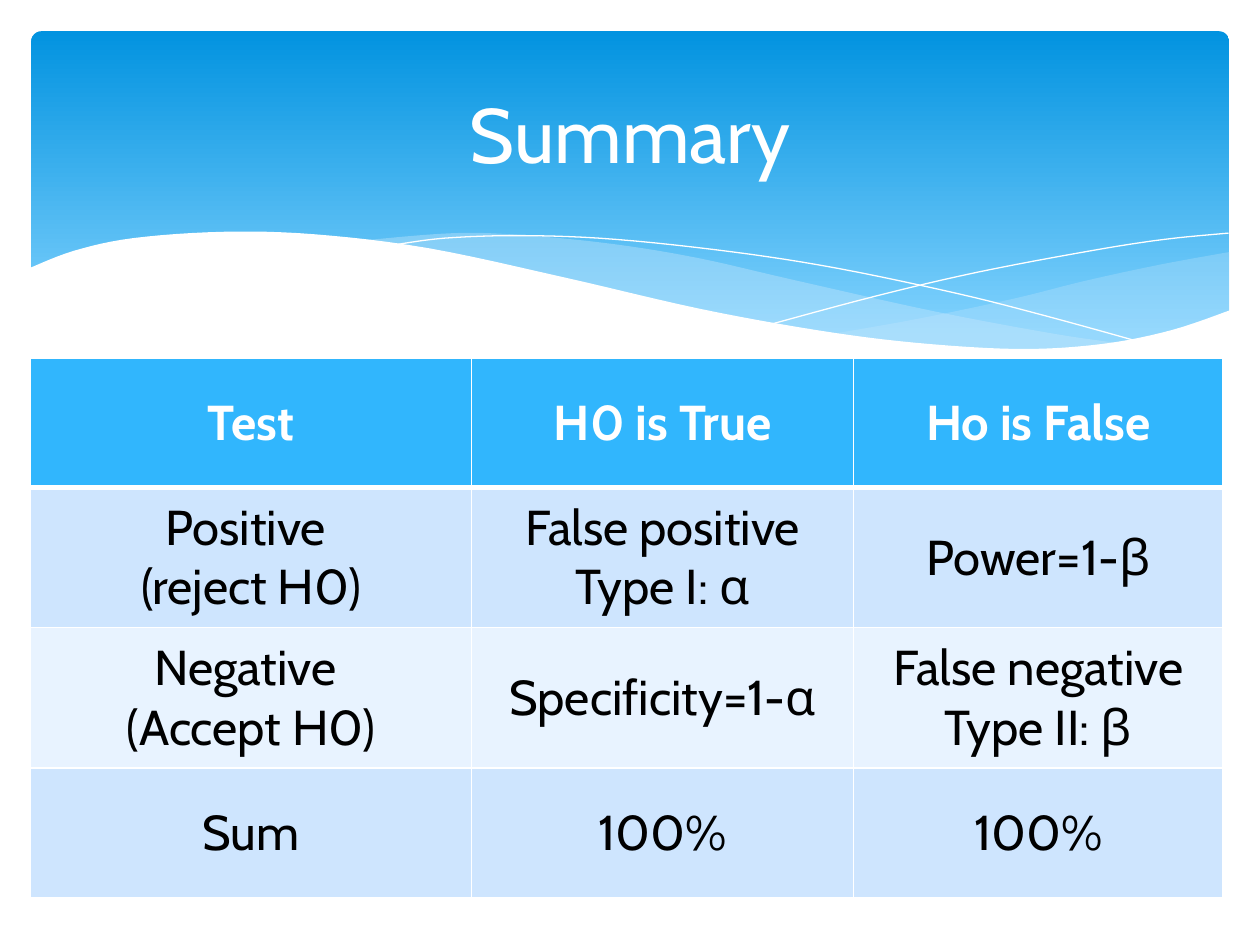
import pptx
import pptx.dml.color
import pptx.enum.shapes
import pptx.enum.text
import pptx.oxml.ns
import pptx.util
from lxml import etree
from pptx.util import Cm, Pt

COLORS = {
    "white": "FFFFFF", "black": "000000", "deep": "0293E0", "sky": "83D3FE",
    "mist": "C6E7FC", "head": "31B6FD", "band": "CEE5FE", "pale": "E8F3FF",
}
FONT = "Cabin"
ROWS = [
    ["Test", "H0 is True", "Ho is False"],
    ["Positive \n(reject H0)", "False positive\nType I: α", "Power=1-β"],
    ["Negative \n(Accept H0)", "Specificity=1-α", "False negative\nType II: β"],
    ["Sum", "100%", "100%"],
]
RIGHT = [
    [(6.61, 2.65), (7.29, 2.53), (8.05, 2.37), (8.61, 2.23), (9.21, 2.1), (9.76, 2)],
    [(9.76, 2.47), (9.49, 2.57), (9.13, 2.67), (8.72, 2.74), (8.14, 2.78),
     (7.57, 2.76), (7.05, 2.71), (6.61, 2.65)],
]
LEFT = [
    [(8.93, 2.73), (8.37, 2.65), (7.41, 2.47), (6.29, 2.22), (5.55, 2.05),
     (4.89, 1.94), (4.2, 1.87), (3.61, 1.85), (2.86, 1.91)],
    [(2.86, 1.91), (3.62, 2.03), (4.49, 2.22), (5.3, 2.4), (6.18, 2.58),
     (6.95, 2.7), (7.61, 2.77), (8.28, 2.78), (8.93, 2.73)],
]
FALL = [[(3.09, 1.95), (3.53, 1.89), (4.16, 1.87), (4.89, 1.9), (5.82, 2),
         (6.65, 2.13), (7.6, 2.33), (8.31, 2.51), (9.07, 2.72)]]
RISE = [[(6.13, 2.57), (6.95, 2.35), (7.76, 2.16), (8.66, 1.99),
         (9.24, 1.9), (9.75, 1.85)]]
FRONT = [
    [(0.23, 2.13), (0.59, 1.99), (1.06, 1.89), (1.77, 1.84), (2.5, 1.86),
     (3.4, 1.97), (4.47, 2.2), (5.55, 2.45), (6.48, 2.62), (7.26, 2.72),
     (8.09, 2.77), (8.75, 2.73), (9.3, 2.62), (9.77, 2.46)],
    [(9.77, 3.29), (0.23, 3.29)],
]


def tint(name):
    """Return the named colour."""
    return pptx.dml.color.RGBColor.from_string(COLORS[name])


def paint(fill, name):
    """Fill with one solid colour."""
    fill.solid()
    fill.fore_color.rgb = tint(name)


def write(frame, text, size=28, color="black", bold=False):
    """Put centred lines of text in a frame."""
    frame.word_wrap = True
    frame.text = text
    for para in frame.paragraphs:
        para.alignment = pptx.enum.text.PP_ALIGN.CENTER
        for run in para.runs:
            run.font.name = FONT
            run.font.size = Pt(size)
            run.font.bold = bold
            run.font.color.rgb = tint(color)


def smooth(knots, steps=6):
    """Return points of a Catmull-Rom curve through the knots."""
    ends = [knots[0], *knots, knots[-1]]
    points = []
    for a, b, c, d in zip(ends, ends[1:], ends[2:], ends[3:]):
        for t in (i / steps for i in range(steps)):
            points.append(tuple(
                q + t * (r - p) / 2 + t**2 * (2 * p - 5 * q + 4 * r - s) / 2
                + t**3 * (3 * q - p - 3 * r + s) / 2
                for p, q, r, s in zip(a, b, c, d)))
    return points + [knots[-1]]


def wave(slide, box, curves, color=None, alpha=100):
    """Draw a filled wave, or a thin white line if no colour is given."""
    left, top, width, _ = box
    unit = width / 10
    points = [(Cm(left + x * unit), Cm(top + y * unit))
              for knots in curves for x, y in smooth(knots)]
    pen = slide.shapes.build_freeform(*points[0], scale=1.0)
    pen.add_line_segments(points[1:], close=color is not None)
    shape = pen.convert_to_shape()
    shape.shadow.inherit = False
    if color is None:
        shape.fill.background()
        shape.line.color.rgb = tint("white")
        shape.line.width = Pt(0)
        return
    paint(shape.fill, color)
    shape.line.fill.background()
    if alpha < 100:
        node = shape._element.spPr.find(".//" + pptx.oxml.ns.qn("a:srgbClr"))
        etree.SubElement(node, pptx.oxml.ns.qn("a:alpha"), val=str(alpha * 1000))


def banner(slide, box, text):
    """Draw the blue banner with its waves and title."""
    left, top, width, height = box
    back = slide.shapes.add_shape(
        pptx.enum.shapes.MSO_SHAPE.ROUNDED_RECTANGLE,
        Cm(left + 0.63), Cm(top + 0.63), Cm(width - 1.25), Cm(height - 1.5))
    back.adjustments[0] = 0.03
    back.shadow.inherit = False
    back.line.fill.background()
    back.fill.gradient()
    back.fill.gradient_angle = 270
    for stop, spot, name in zip(back.fill.gradient_stops, (0, 0.9), ("deep", "sky")):
        stop.position = spot
        stop.color.rgb = tint(name)
    wave(slide, box, RIGHT, "mist", 29)
    wave(slide, box, LEFT, "mist", 40)
    wave(slide, box, FALL)
    wave(slide, box, RISE)
    wave(slide, box, FRONT, "white")
    title = slide.shapes.add_textbox(
        Cm(left + 1.27), Cm(top + 0.94), Cm(width - 2.54), Cm(3.48))
    title.text_frame.vertical_anchor = pptx.enum.text.MSO_ANCHOR.MIDDLE
    write(title.text_frame, text, size=44, color="white")


def edge(cell, **widths):
    """Give a cell white borders of the given widths."""
    props = cell._tc.get_or_add_tcPr()
    for side, width in widths.items():
        line = etree.SubElement(props, pptx.oxml.ns.qn("a:ln" + side), w=str(Pt(width)))
        fill = etree.SubElement(line, pptx.oxml.ns.qn("a:solidFill"))
        etree.SubElement(fill, pptx.oxml.ns.qn("a:srgbClr"), val=COLORS["white"])


def grid(slide, box, rows):
    """Draw the table of test results."""
    left, top, width, height = box
    table = slide.shapes.add_table(
        len(rows), len(rows[0]), Cm(left), Cm(top), Cm(width), Cm(height)).table
    for col, share in zip(table.columns, (0.37, 0.32, 0.31)):
        col.width = Cm(width * share)
    for row, share in zip(table.rows, (0.24, 0.26, 0.26, 0.24)):
        row.height = Cm(height * share)
    for i, row in enumerate(rows):
        for j, text in enumerate(row):
            cell = table.cell(i, j)
            edge(cell, L=1, R=1, T=3 if i == 1 else 1, B=1 if i else 3)
            paint(cell.fill, ("head", "band", "pale", "band")[i])
            cell.vertical_anchor = pptx.enum.text.MSO_ANCHOR.MIDDLE
            write(cell.text_frame, text, color="black" if i else "white", bold=i == 0)


def main():
    """Build and save the slide."""
    deck = pptx.Presentation()
    deck.slide_width, deck.slide_height = Cm(25.4), Cm(19.05)
    slide = deck.slides.add_slide(deck.slide_layouts[6])
    banner(slide, (0, 0, 25.4, 8.36), "Summary")
    grid(slide, (0.61, 7.22, 24.05, 10.87), ROWS)
    deck.save("out.pptx")


if __name__ == "__main__":
    main()
